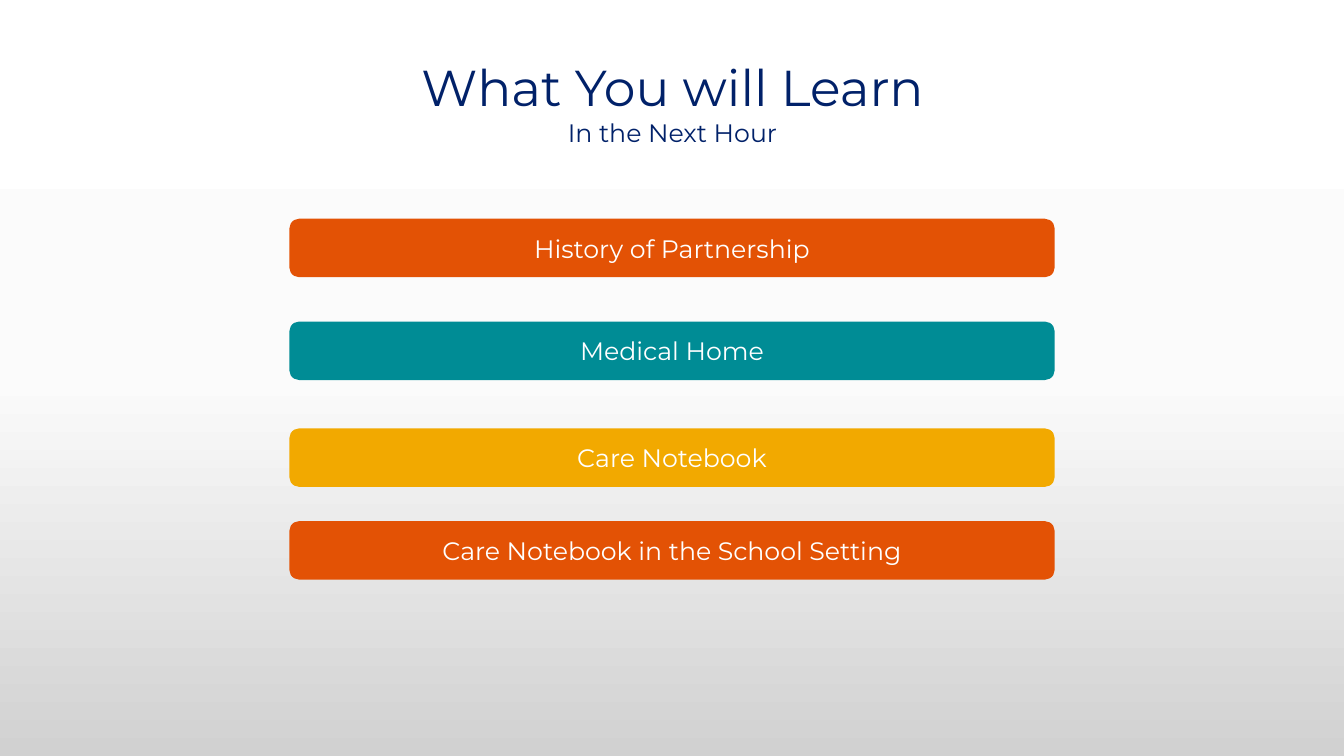
from copy import deepcopy

from pptx import Presentation
from pptx.dml.color import RGBColor
from pptx.enum.shapes import MSO_SHAPE
from pptx.enum.text import MSO_ANCHOR, PP_ALIGN
from pptx.oxml.ns import qn
from pptx.util import Inches, Pt

COLORS = {
    "navy": "012169",
    "orange": "E35205",
    "teal": "008C95",
    "gold": "F2A900",
    "white": "FFFFFF",
    "mist": "FBFBFB",
    "silver": "D1D1D1",
}


def rgb(name):
    return RGBColor.from_string(COLORS[name])


class AgendaSlide:
    font = "Montserrat"

    def __init__(self, deck):
        self.slide = deck.slides.add_slide(deck.slide_layouts[6])

    def backdrop(self, names):
        fill = self.slide.background.fill
        fill.gradient()
        fill.gradient_angle = 270
        stops = self.slide.element.find(".//" + qn("a:gsLst"))
        while len(stops) < len(names):
            stops.append(deepcopy(stops[0]))
        for index, (stop, name) in enumerate(zip(fill.gradient_stops, names)):
            stop.color.rgb = rgb(name)
            stop.position = index / (len(names) - 1)

    def label(self, shape, wording, size, color, anchor, spacing):
        frame = shape.text_frame
        frame.text = wording
        paragraph = frame.paragraphs[0]
        formats = (
            (frame, {"word_wrap": True, "vertical_anchor": anchor}),
            (paragraph, {"alignment": PP_ALIGN.CENTER, **spacing}),
            (paragraph.runs[0].font, {"name": self.font, "size": Pt(size)}),
        )
        for target, values in formats:
            for attribute, value in values.items():
                setattr(target, attribute, value)
        paragraph.runs[0].font.color.rgb = rgb(color)

    def heading(self, wording, box, size, anchor, **spacing):
        shape = self.slide.shapes.add_textbox(*map(Inches, box))
        self.label(shape, wording, size, "navy", anchor,
                   {"line_spacing": 0.9, **spacing})

    def topic(self, wording, top, color):
        bar = self.slide.shapes.add_shape(
            MSO_SHAPE.ROUNDED_RECTANGLE,
            *map(Inches, (2.87, top, 7.59, 0.58)))
        bar.shadow.inherit = False
        bar.fill.solid()
        bar.fill.fore_color.rgb = rgb(color)
        bar.line.fill.background()
        self.label(bar, wording, 18, "white", MSO_ANCHOR.MIDDLE, {})


def main():
    deck = Presentation()
    deck.slide_width, deck.slide_height = Inches(13.33), Inches(7.5)
    agenda = AgendaSlide(deck)
    agenda.backdrop(("white", "mist", "silver"))
    agenda.heading("What You will Learn", (0.92, 0.41, 11.5, 0.97), 36,
                   MSO_ANCHOR.MIDDLE)
    agenda.heading("In the Next Hour", (1.67, 1.15, 10, 0.48), 18,
                   MSO_ANCHOR.TOP, space_before=Pt(10))
    topics = (
        ("History of Partnership", 2.17, "orange"),
        ("Medical Home", 3.19, "teal"),
        ("Care Notebook", 4.25, "gold"),
        ("Care Notebook in the School Setting", 5.17, "orange"),
    )
    for wording, top, color in topics:
        agenda.topic(wording, top, color)
    deck.save("out.pptx")


if __name__ == "__main__":
    main()
